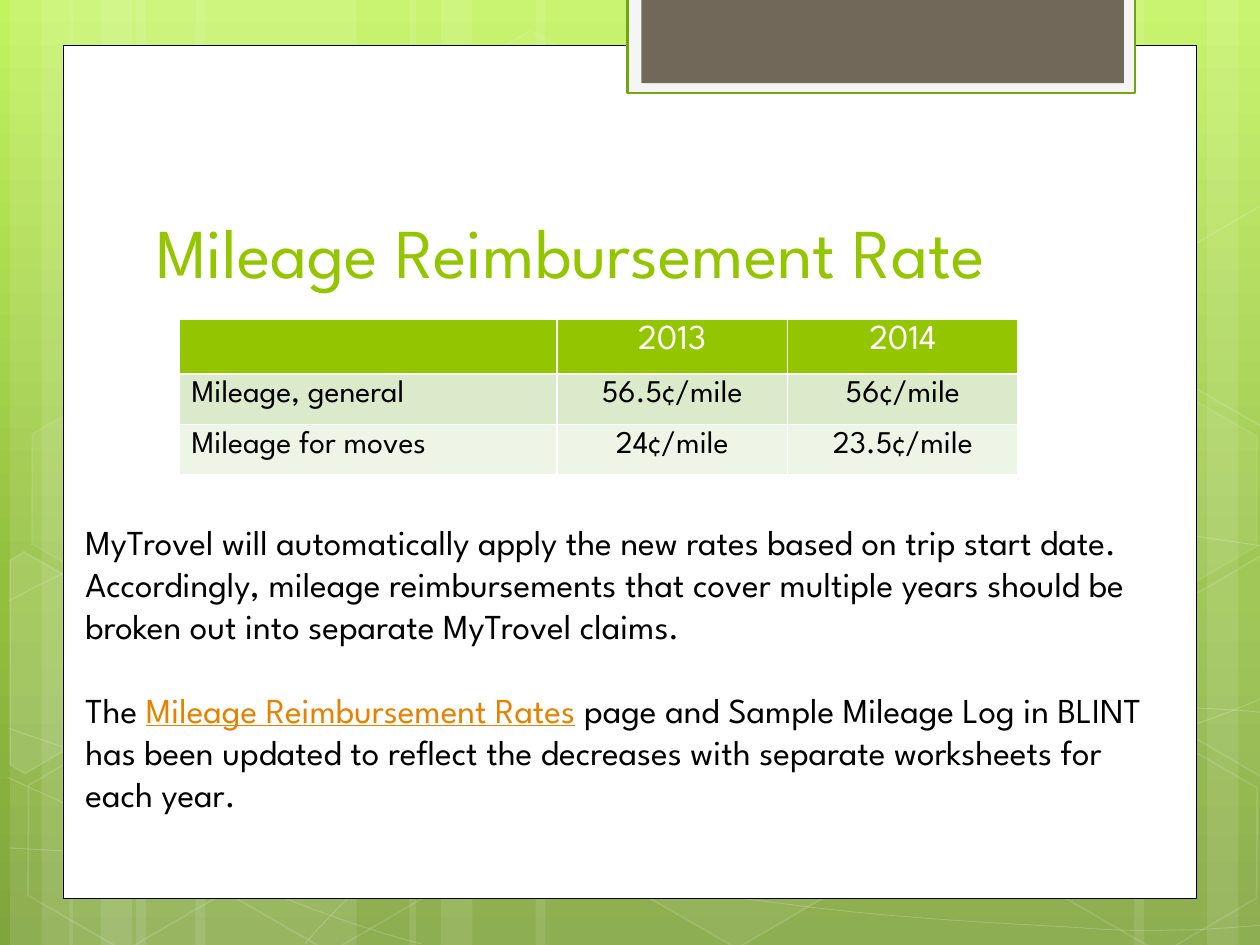
from lxml import etree
from pptx import Presentation, util as u
from pptx.dml.color import RGBColor
from pptx.enum import shapes, text
from pptx.oxml import ns

FONT = "League Spartan"
COLORS = {"white": "FFFFFF", "black": "000000", "green": "94C600", "edge": "74A510",
          "pale": "F5F5F5", "brown": "71685A", "link": "E68200",
          "band1": "DCEACC", "band2": "EEF5E7"}
GRADIENT = [(0, "C3F35F"), (62, "93BF3F"), (100, "81A53E")]

TITLE = [[("Mileage Reimbursement Rate", "green")]]
BODY = [
    [("MyTrovel will automatically apply the new rates based on trip start date. "
      "Accordingly, mileage reimbursements that cover multiple years should be "
      "broken out into separate MyTrovel claims.", "black")],
    [("The ", "black"), ("Mileage Reimbursement Rates", "link"),
     (" page and Sample Mileage Log in BLINT has been updated to reflect the "
      "decreases with separate worksheets for each year.", "black")],
]
RATES = [("", "2013", "2014"),
         ("Mileage, general", "56.5¢/mile", "56¢/mile"),
         ("Mileage for moves", "24¢/mile", "23.5¢/mile")]
ROW_STYLES = [("green", "white", 20, 0.44), ("band1", "black", 18, 0.4), ("band2", "black", 18, 0.4)]

STRIPES = [(1.08, 1.75), (0.08, 0.5), (0.33, 0.83), (1.55, 1.75), (0.55, 0.5), (0.8, 0.83),
           (7.33, 1.75), (9.58, 0.5), (9, 0.83), (4.25, 3.08), (3.25, 0.5), (3.5, 0.83)]
CURVES = [
    [(0.07, 6.73), (0.61, 6.76), (1.15, 6.79), (1.9, 6.78), (2.65, 6.77), (3.58, 6.75),
     (4.58, 6.65), (5.58, 6.55), (7, 6.36), (7.92, 6.17), (8.83, 5.98), (9.77, 5.68), (10.07, 5.51)],
    [(0.07, 4.77), (0.36, 4.61), (0.65, 4.46), (1.21, 4.31), (1.78, 4.16), (2.59, 3.94),
     (3.47, 3.87), (4.36, 3.8), (5.44, 3.79), (6.54, 3.87), (7.64, 3.95), (9.47, 4.26), (10.07, 4.34)],
    [(0.06, 6.17), (1.27, 6.72), (2.47, 7.27), (3.34, 7.49)],
    [(0.07, 5.78), (0.38, 5.89), (0.7, 6), (1.28, 6.16), (1.86, 6.31), (2.73, 6.56), (3.57, 6.73),
     (4.4, 6.9), (5.45, 7.08), (6.28, 7.18), (7.11, 7.29), (8, 7.33), (8.53, 7.36),
     (9.05, 7.4), (9.19, 7.38), (9.45, 7.38), (9.71, 7.37), (9.89, 7.35), (10.07, 7.34)],
    [(2.42, 7.49), (2.6, 7.29), (2.78, 7.09), (3.02, 6.91), (3.26, 6.73), (3.6, 6.53), (3.88, 6.39),
     (4.16, 6.25), (4.33, 6.19), (4.7, 6.09), (5.06, 5.99), (5.73, 5.85), (6.08, 5.78),
     (6.44, 5.71), (6.49, 5.71), (6.8, 5.69), (7.11, 5.66), (7.6, 5.63), (7.94, 5.62),
     (8.29, 5.61), (8.86, 5.62), (8.86, 5.62), (9.53, 5.62),
     (9.71, 5.63), (9.88, 5.64), (9.97, 5.65), (10.06, 5.66), (10.03, 5.65), (10.06, 5.66)],
]
STRAIGHT_ENDS = [(9.53, 5.62)]
HEXAGONS = [(3.34, 0.36, 4, 8), (4.97, 5.89, 6, 12), (0.11, 5.91, None, 12), (0.14, 3.12, 7, 8),
            (1.74, 5.92, None, 12), (7.53, 4.53, 10, 12), (8.34, 5.93, None, 12), (8.34, 3.14, 7, 8)]
CUT_HEXAGONS = [
    ([(0.08, 4.45), (0.19, 4.38), (0.96, 4.82), (0.95, 5.7), (0.2, 6.14), (0.08, 6.07)], 10),
    ([(9.26, 4.85), (10.01, 4.41), (10.09, 4.46), (10.09, 6.13), (10.02, 6.17), (9.26, 5.73)], 4),
    ([(9.26, 2.07), (10.01, 1.63), (10.1, 1.68), (10.09, 3.35), (10.02, 3.39), (9.26, 2.95)], None),
]
PANELS = [((0.5, 0.36, 9, 6.77), "white", "black", 0.5),
          ((4.98, -0.02, 4.03, 0.76), "pale", "edge", 1.25),
          ((5.09, -0.02, 3.83, 0.68), "brown", None, 0)]


def inch(v):
    return u.Cm(v * 2.54)


def rgb(name):
    return RGBColor.from_string(COLORS[name])


def set_all(obj, values):
    for name, value in values.items():
        setattr(obj, name, value)


def solid(fill, color, alpha=100):
    if color is None or alpha is None:
        fill.background()
        return
    fill.solid()
    fill.fore_color.rgb = rgb(color)
    if alpha < 100:
        clr = fill._xPr.find(".//" + ns.qn("a:srgbClr"))
        etree.SubElement(clr, ns.qn("a:alpha"), val=str(alpha * 1000))


def paint(sp, color, alpha=100, line=None, width=0, line_alpha=100):
    sp.shadow.inherit = False
    solid(sp.fill, color, alpha)
    solid(sp.line.fill, line, line_alpha)
    if line:
        sp.line.width = u.Pt(width)


def add_shape(s, kind, box):
    return s.shapes.add_shape(kind, *map(inch, box))


def add_outline(s, points, close):
    pts = [(inch(x), inch(y)) for x, y in points]
    fb = s.shapes.build_freeform(*pts[0], scale=1.0)
    fb.add_line_segments(pts[1:], close=close)
    return fb.convert_to_shape()


def add_curve(s, points):
    sp = add_outline(s, points, False)
    segments = sp._element.findall(".//" + ns.qn("a:lnTo"))
    bends = [seg for seg, pt in zip(segments, points[1:]) if pt not in STRAIGHT_ENDS]
    for i in range(0, len(bends), 3):
        bezier = etree.Element(ns.qn("a:cubicBezTo"))
        bends[i].addprevious(bezier)
        for seg in bends[i:i + 3]:
            bezier.append(seg[0])
            seg.getparent().remove(seg)
    return sp


def add_run(p, words, color, size):
    r = p.add_run()
    r.text = words
    set_all(r.font, {"name": FONT, "size": u.Pt(size), "underline": color == "link"})
    r.font.color.rgb = rgb(color)


def add_text(s, box, paragraphs, size, anchor, gap=0):
    tf = s.shapes.add_textbox(*map(inch, box)).text_frame
    set_all(tf, {"word_wrap": True, "vertical_anchor": anchor})
    for i, runs in enumerate(paragraphs):
        p = tf.add_paragraph() if i else tf.paragraphs[0]
        p.space_before = u.Pt(gap if i else 0)
        for words, color in runs:
            add_run(p, words, color, size)


def add_borders(cell):
    tcPr = cell._tc.get_or_add_tcPr()
    for i, side in enumerate(("lnL", "lnR", "lnT", "lnB")):
        ln = etree.Element(ns.qn("a:" + side), w=str(u.Pt(1)))
        fill = etree.SubElement(ln, ns.qn("a:solidFill"))
        etree.SubElement(fill, ns.qn("a:srgbClr"), val=COLORS["white"])
        tcPr.insert(i, ln)


def add_background(s):
    fill = s.background.fill
    fill.gradient()
    fill.gradient_angle = 270
    stops = s.background._cSld.find(".//" + ns.qn("a:gsLst"))
    for old in list(stops):
        stops.remove(old)
    for pos, color in GRADIENT:
        gs = etree.SubElement(stops, ns.qn("a:gs"), pos=str(pos * 1000))
        etree.SubElement(gs, ns.qn("a:srgbClr"), val=color)


def add_decor(s):
    kinds = shapes.MSO_SHAPE
    for x, w in STRIPES:
        paint(add_shape(s, kinds.RECTANGLE, (x, 0, w, 7.5)), "white", 10)
    for points in CURVES:
        paint(add_curve(s, points), None, 100, "white", 0.5, 20)
    for x, y, alpha, line_alpha in HEXAGONS:
        sp = add_shape(s, kinds.HEXAGON, (x, y, 1.75, 1.52))
        sp.rotation = 30
        sp.adjustments[0] = 0.285
        paint(sp, "white", alpha, "white", 1, line_alpha)
    for points, alpha in CUT_HEXAGONS:
        paint(add_outline(s, points, True), "white", alpha, "white", 1, 12)
    for box, color, line, width in PANELS:
        paint(add_shape(s, kinds.RECTANGLE, box), color, 100, line, width)


def add_rates(s):
    table = s.shapes.add_table(3, 3, *map(inch, (1.42, 2.53, 6.67, 1.24))).table
    for col, width in zip(table.columns, (3, 1.83, 1.83)):
        col.width = inch(width)
    for i, (row, (fill, color, size, height)) in enumerate(zip(RATES, ROW_STYLES)):
        table.rows[i].height = inch(height)
        for j, words in enumerate(row):
            cell = table.cell(i, j)
            solid(cell.fill, fill)
            add_borders(cell)
            p = cell.text_frame.paragraphs[0]
            p.alignment = text.PP_ALIGN.CENTER if j else text.PP_ALIGN.LEFT
            if words:
                add_run(p, words, color, size)


def main():
    prs = Presentation()
    set_all(prs, {"slide_width": inch(10), "slide_height": inch(7.5)})
    s = prs.slides.add_slide(prs.slide_layouts[6])
    add_background(s)
    add_decor(s)
    add_text(s, (1.14, 1.12, 8.36, 1.25), TITLE, 40, text.MSO_ANCHOR.BOTTOM)
    add_text(s, (0.58, 4.08, 8.83, 2.79), BODY, 20, text.MSO_ANCHOR.TOP, gap=24)
    add_rates(s)
    prs.save("out.pptx")


if __name__ == "__main__":
    main()
